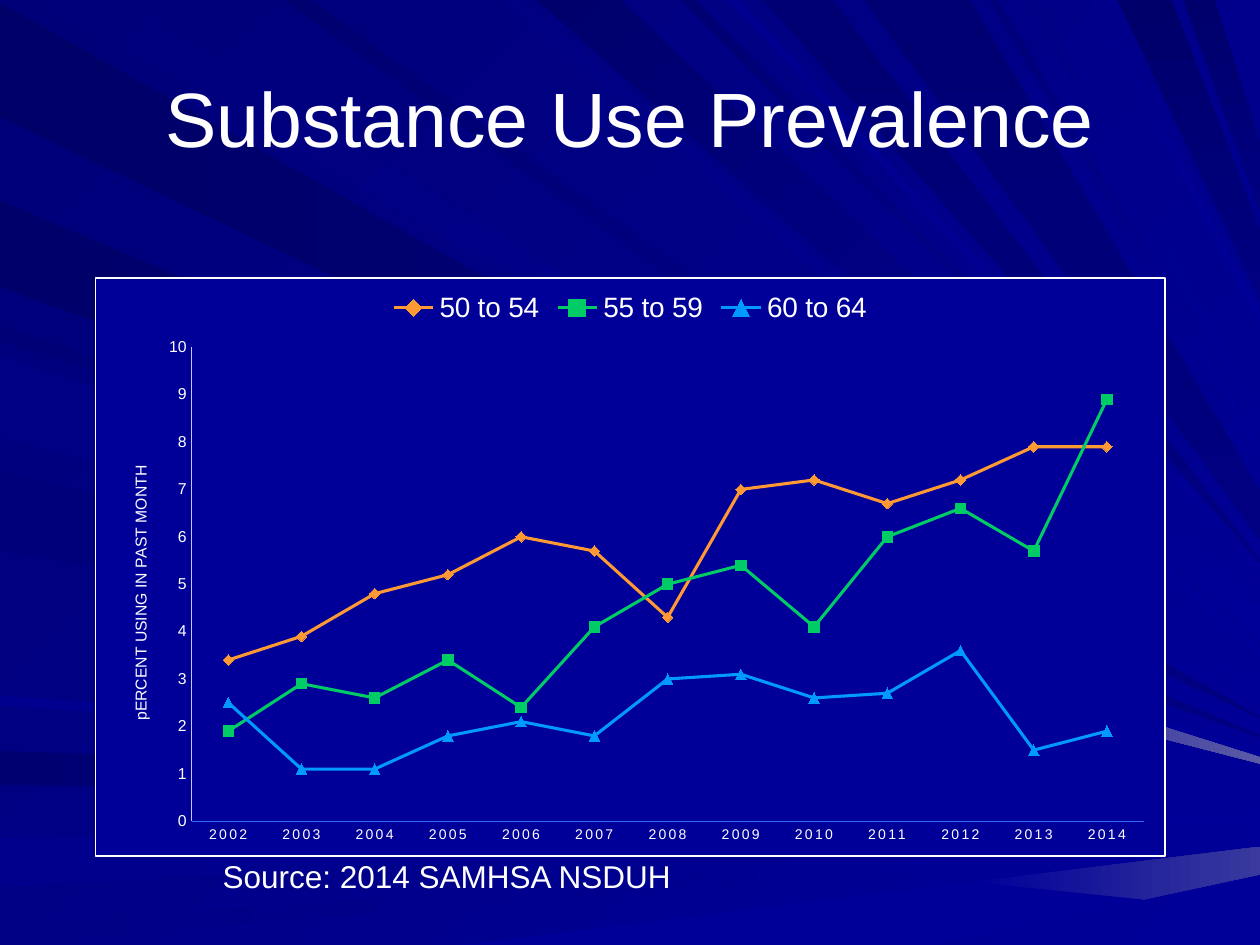
from lxml.etree import SubElement
from pptx import Presentation
from pptx.chart.data import CategoryChartData
from pptx.dml.color import RGBColor
from pptx.enum.chart import XL_CHART_TYPE, XL_LEGEND_POSITION, XL_MARKER_STYLE, XL_TICK_MARK
from pptx.enum.text import MSO_ANCHOR, PP_ALIGN
from pptx.oxml import parse_xml
from pptx.oxml.ns import nsdecls, qn
from pptx.util import Cm, Pt

TITLE = "Substance Use Prevalence"
SOURCE = "Source: 2014 SAMHSA NSDUH"
AXIS = "pERCENT USING IN PAST MONTH"
YEARS = [str(year) for year in range(2002, 2015)]
AGES = [
    ("50 to 54", "FF9933", XL_MARKER_STYLE.DIAMOND,
     (3.4, 3.9, 4.8, 5.2, 6, 5.7, 4.3, 7, 7.2, 6.7, 7.2, 7.9, 7.9)),
    ("55 to 59", "00CC66", XL_MARKER_STYLE.SQUARE,
     (1.9, 2.9, 2.6, 3.4, 2.4, 4.1, 5, 5.4, 4.1, 6, 6.6, 5.7, 8.9)),
    ("60 to 64", "0099FF", XL_MARKER_STYLE.TRIANGLE,
     (2.5, 1.1, 1.1, 1.8, 2.1, 1.8, 3, 3.1, 2.6, 2.7, 3.6, 1.5, 1.9)),
]
THEME = dict(font="Arial", ink="FFFFFF", back="000099", dark="000078",
             base="3366FF", side="C6C6FF",
             title=44, source=18, legend=16, value=9, year=8)

# Each ray runs from one edge to the right edge, in hundredths of an inch:
# edge, start, stop, tip, tip depth, first blue, last blue, colour of the tail
WIDE, HIGH, SPLIT = 1000, 750, 0.64
RAYS = [
    ("left", 2, 93, 569, 1, "69", "80", None),
    ("top", 26, 101, 562, 1, "7B", "99", None),
    ("left", 596, 623, 631, 1, "71", "99", None),
    ("left", 665, 704, 643, 8, "8C", "99", None),
    ("left", 735, 750, 662, 1, "85", "99", None),
    ("base", 364, 742, 672, 22, "99", "99", "39399E"),
    ("left", 258, 270, 589, 1, "76", "99", None),
    ("left", 159, 228, 584, 1, "6B", "80", None),
    ("top", 398, 416, 515, 6, "83", "99", None),
    ("top", 426, 492, 479, 28, "6D", "99", None),
    ("top", 540, 552, 462, 1, "73", "99", None),
    ("top", 606, 661, 445, 1, "73", "80", None),
    ("top", 887, 930, 183, 54, "6B", "80", None),
    ("top", 939, 964, 114, 53, "6D", "80", None),
    ("left", 278, 342, 596, 6, "7E", "99", None),
    ("left", 374, 437, 605, 1, "7B", "99", None),
    ("left", 552, 560, 621, 2, "8E", "99", None),
    ("top", 225, 247, 547, 5, "70", "99", None),
    ("top", 577, 588, 453, 1, "8E", "99", None),
    ("top", 686, 770, 390, 38, "73", "80", None),
    ("top", 785, 792, 354, 6, "78", "99", None),
    ("top", 815, 824, 335, 1, "85", "99", None),
    ("top", 865, 872, 249, 9, "8A", "99", None),
    ("left", 283, 347, 601, 5, "85", "99", "5A5AA6"),
]


def rgb(name):
    return RGBColor.from_string(THEME.get(name, name))


def style(font, size, ink="ink"):
    font.name, font.size, font.bold = THEME["font"], Pt(THEME[size]), False
    font.color.rgb = rgb(ink)


def write(frame, text, size, align=PP_ALIGN.LEFT, anchor=MSO_ANCHOR.TOP):
    frame.word_wrap, frame.vertical_anchor = True, anchor
    para = frame.paragraphs[0]
    para.text, para.alignment = text, align
    style(para.runs[0].font, size)


def paint(fill, first, last, angle):
    """Fill plainly, or with a gradient whose angle runs clockwise."""
    if first == last:
        fill.solid()
        fill.fore_color.rgb = rgb(first)
        return
    fill.gradient()
    fill.gradient_angle = (360 - angle) % 360
    for stop, tone in zip(fill.gradient_stops, (first, last)):
        stop.color.rgb = rgb(tone)


def draw_band(group, dots, first, last, angle):
    pen = group.shapes.build_freeform(*dots[0], scale=Cm(0.0254))
    pen.add_line_segments(dots[1:], close=True)
    band = pen.convert_to_shape()
    band.shadow.inherit = False
    band.line.fill.background()
    paint(band.fill, first, last, angle)


def between(start, end):
    return tuple(round(a + (b - a) * SPLIT) for a, b in zip(start, end))


def draw_rays(slide):
    group = slide.shapes.add_group_shape()
    for edge, start, stop, tip, depth, first, last, tail in RAYS:
        root = [(0, at) if edge == "left" else (at, 0 if edge == "top" else HIGH)
                for at in (start, stop)]
        ends = [(WIDE, tip), (WIDE, tip + depth)]
        if edge == "top":
            ends.reverse()
        angle = 0 if edge != "top" else 90 if last == "80" else 45
        first, last = "0000" + first, "0000" + last
        if tail:
            cut = [between(*pair) for pair in zip(root, ends)]
            draw_band(group, cut + ends[::-1], last, tail, angle)
            ends = cut
        draw_band(group, root + ends[::-1], first, last, angle)
    slide.shapes._spTree.insert(2, group._element)


def place(part, spot, **sides):
    """Fix a chart part by fractions of the chart's size."""
    old = part.find(qn("c:layout"))
    if old is not None:
        part.remove(old)
    layout = parse_xml(f"<c:layout {nsdecls('c')}><c:manualLayout/></c:layout>")
    marks = {"xMode": "edge", "yMode": "edge", **sides}
    if "w" in sides:
        marks = {"layoutTarget": "inner", **marks}
    for key, value in marks.items():
        SubElement(layout[0], qn("c:" + key)).set("val", str(value))
    part.insert(spot, layout)


def draw_axis(axis, size, line):
    axis.has_major_gridlines = False
    axis.major_tick_mark = axis.minor_tick_mark = XL_TICK_MARK.NONE
    axis.format.line.color.rgb = rgb(line)
    axis.format.line.width = Pt(0.75)
    style(axis.tick_labels.font, size)


def draw_chart(slide):
    data = CategoryChartData()
    data.categories = YEARS
    for name, _, _, values in AGES:
        data.add_series(name, values)
    chart = slide.shapes.add_chart(XL_CHART_TYPE.LINE_MARKERS, Cm(1.91), Cm(5.59),
                                   Cm(21.59), Cm(11.68), data).chart
    style(chart.font, "value")
    chart.has_title = False
    chart.has_legend = True
    chart.legend.position = XL_LEGEND_POSITION.TOP
    chart.legend.include_in_layout = False
    style(chart.legend.font, "legend")

    years, share = chart.category_axis, chart.value_axis
    draw_axis(years, "year", "base")
    years._element.find(".//" + qn("a:defRPr")).set("spc", "120")
    draw_axis(share, "value", "side")
    share.minimum_scale, share.maximum_scale, share.major_unit = 0, 10, 1
    label = share.axis_title
    write(label.text_frame, AXIS, "value", PP_ALIGN.CENTER)
    label._element.find(".//" + qn("a:bodyPr")).set("rot", "-5400000")
    place(label._element, 1, x=0.03, y=0.32)

    plot = chart.plots[0]
    plot.vary_by_categories = False
    place(chart._chartSpace.chart.plotArea, 0, x=0.09, y=0.12, w=0.89, h=0.82)
    for line, (_, tone, mark, _) in zip(plot.series, AGES):
        line.smooth = False
        line.format.line.color.rgb = rgb(tone)
        line.format.line.width = Pt(1.75)
        line.marker.style, line.marker.size = mark, 6
        paint(line.marker.format.fill, tone, tone, 0)
        line.marker.format.line.color.rgb = rgb(tone)

    chart._chartSpace.chart.addnext(parse_xml(
        f"<c:spPr {nsdecls('c', 'a')}>"
        f"<a:solidFill><a:srgbClr val='{THEME['back']}'/></a:solidFill>"
        f"<a:ln w='{Pt(0.75)}'><a:solidFill><a:srgbClr val='{THEME['ink']}'/>"
        "</a:solidFill></a:ln></c:spPr>"))


def main():
    deck = Presentation()
    deck.slide_width, deck.slide_height = Cm(25.4), Cm(19.05)
    slide = deck.slides.add_slide(deck.slide_layouts[5])
    paint(slide.background.fill, "dark", "back", 45)
    draw_rays(slide)
    title = slide.shapes.title
    title.left, title.top, title.width, title.height = Cm(1.27), Cm(0.76), Cm(22.86), Cm(3.18)
    write(title.text_frame, TITLE, "title", PP_ALIGN.CENTER, MSO_ANCHOR.MIDDLE)
    draw_chart(slide)
    note = slide.shapes.add_textbox(Cm(4.24), Cm(17.15), Cm(10.16), Cm(1.02))
    write(note.text_frame, SOURCE, "source")
    deck.save("out.pptx")


if __name__ == "__main__":
    main()
